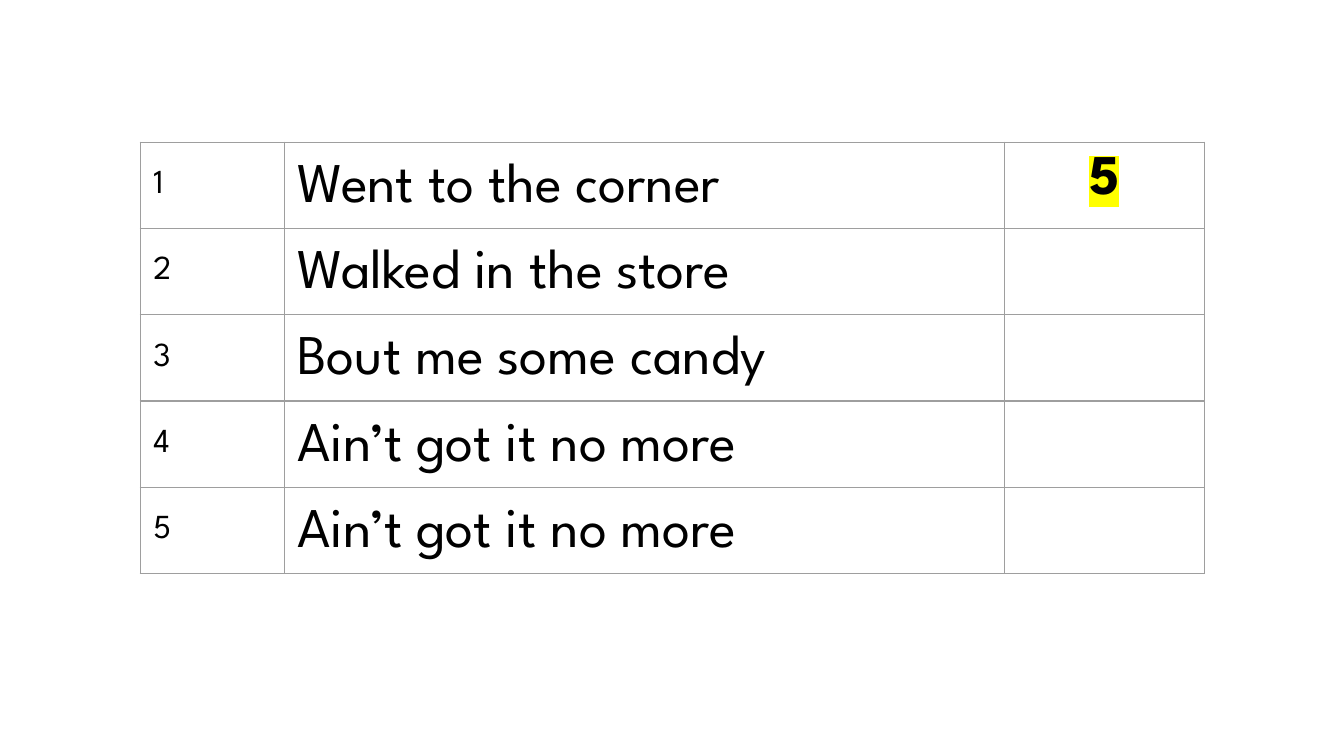
from lxml.etree import SubElement
from pptx import Presentation
from pptx.dml.color import RGBColor
from pptx.enum.text import PP_ALIGN
from pptx.oxml import parse_xml
from pptx.oxml.ns import nsdecls, qn
from pptx.util import Cm, Pt

COLORS = {"text": "000000", "border": "9E9E9E", "highlight": "FFFF00"}
LYRICS = [
    "Went to the corner",
    "Walked in the store",
    "Bout me some candy",
    "Ain’t got it no more",
    "Ain’t got it no more",
]
COUNTS = ["5", "", "", "", ""]
COLUMN_WIDTHS = [Cm(2.72), Cm(13.61), Cm(3.78)]
FONT = {"name": "League Spartan", "bold": False}
MARGINS = {f"margin_{side}": Cm(0.25) for side in ("left", "right", "top", "bottom")}
COLUMN_FORMATS = [
    {
        "cell": {**MARGINS, "margin_top": Cm(0.44)},
        "paragraph": {"line_spacing": 1.15},
        "font": {**FONT, "size": Pt(18)},
    },
    {
        "cell": MARGINS,
        "paragraph": {"line_spacing": 1.15},
        "font": {**FONT, "size": Pt(30)},
    },
    {
        "cell": MARGINS,
        "paragraph": {"alignment": PP_ALIGN.CENTER},
        "font": {**FONT, "size": Pt(30), "bold": True},
    },
]


def apply_format(target, values):
    """Set every attribute named in values on target."""
    for name, value in values.items():
        setattr(target, name, value)


def style_cell(cell):
    """Give a cell thin grey borders and no fill."""
    properties = cell._tc.get_or_add_tcPr()
    for edge in ("lnL", "lnR", "lnT", "lnB"):
        properties.append(parse_xml(
            f'<a:{edge} {nsdecls("a")} w="{Pt(0.75)}"><a:solidFill>'
            f'<a:srgbClr val="{COLORS["border"]}"/></a:solidFill></a:{edge}>'
        ))
    cell.fill.background()


def highlight(run):
    """Mark a run with the highlight colour."""
    properties = run._r.get_or_add_rPr()
    marker = SubElement(properties, qn("a:highlight"))
    SubElement(marker, qn("a:srgbClr"), val=COLORS["highlight"])
    properties.find(qn("a:latin")).addprevious(marker)


def write_cell(cell, wording, formats):
    """Write one formatted line into a cell."""
    apply_format(cell, formats["cell"])
    paragraph = cell.text_frame.paragraphs[0]
    apply_format(paragraph, formats["paragraph"])
    if not wording:
        return
    run = paragraph.add_run()
    run.text = wording
    apply_format(run.font, formats["font"])
    run.font.color.rgb = RGBColor.from_string(COLORS["text"])
    if formats["font"]["bold"]:
        highlight(run)


def add_lyrics_table(slide, left, top, width, height):
    """Place the numbered lyrics and their counts in the given box."""
    lyrics_table = slide.shapes.add_table(
        len(LYRICS), len(COLUMN_WIDTHS), left, top, width, height
    ).table
    apply_format(lyrics_table, {"first_row": False, "horz_banding": False})
    for column, column_width in zip(lyrics_table.columns, COLUMN_WIDTHS):
        column.width = column_width
    for number, (row, lyric, count) in enumerate(
        zip(lyrics_table.rows, LYRICS, COUNTS), start=1
    ):
        for cell, wording, formats in zip(
            row.cells, (str(number), lyric, count), COLUMN_FORMATS
        ):
            style_cell(cell)
            write_cell(cell, wording, formats)


def main():
    """Build the slide and save it."""
    presentation = Presentation()
    apply_format(presentation, {"slide_width": Cm(25.4), "slide_height": Cm(14.29)})
    slide = presentation.slides.add_slide(presentation.slide_layouts[6])
    add_lyrics_table(slide, Cm(2.65), Cm(2.69), sum(COLUMN_WIDTHS), Cm(8.15))
    presentation.save("out.pptx")


if __name__ == "__main__":
    main()
